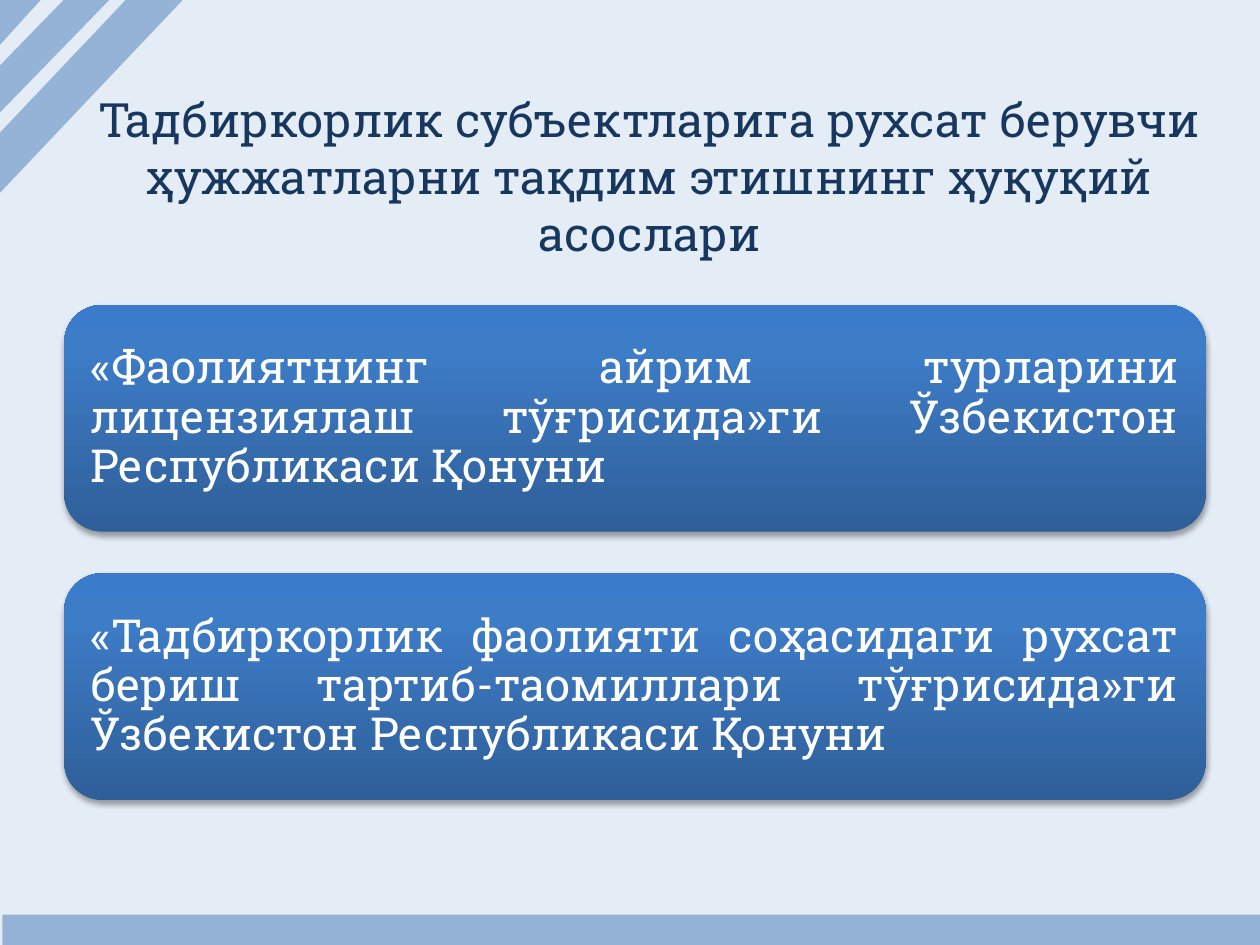
from lxml import etree
from pptx import Presentation
from pptx import util as u
from pptx.dml.color import RGBColor
from pptx.enum import shapes, text
from pptx.oxml import parse_xml
from pptx.oxml.ns import nsdecls, qn

COLUMNS, ROWS = 100, 75
COLORS = {
    "background": "E4ECF5",
    "accent": "95B3D7",
    "title": "17375E",
    "law": "FFFFFF",
    "shadow": "000000",
}
LAW_GRADIENT = [(0, "2F5F99"), (80, "3D7CC7"), (100, "3A7CCB")]


class LawSlide:
    font = "Roboto Slab"

    def __init__(self, deck):
        self.column = deck.slide_width / COLUMNS
        self.row = deck.slide_height / ROWS
        self.slide = deck.slides.add_slide(deck.slide_layouts[6])
        self.paint(self.slide.background.fill, "background")

    def paint(self, fill, color):
        fill.solid()
        fill.fore_color.rgb = RGBColor.from_string(COLORS[color])

    def place(self, left, top, width, height):
        return [round(cells * size) for cells, size in
                zip((left, top, width, height), (self.column, self.row) * 2)]

    def typeset(self, frame, words, size, color, align):
        frame.word_wrap = True
        frame.vertical_anchor = text.MSO_ANCHOR.MIDDLE
        paragraph = frame.paragraphs[0]
        paragraph.text = words
        paragraph.alignment = align
        paragraph.font.name = self.font
        paragraph.font.size = u.Pt(size)
        paragraph.font.color.rgb = RGBColor.from_string(COLORS[color])
        return paragraph

    def title(self, box, words):
        heading = self.slide.shapes.add_textbox(*self.place(*box))
        self.typeset(heading.text_frame, words, 27, "title", text.PP_ALIGN.CENTER)

    def decoration(self, kind, box, rotation=0, adjustment=None):
        ornament = self.slide.shapes.add_shape(kind, *self.place(*box))
        ornament.shadow.inherit = False
        ornament.rotation = rotation
        if adjustment is not None:
            ornament.adjustments[0] = adjustment
        self.paint(ornament.fill, "accent")
        ornament.line.fill.background()

    def law(self, box, words):
        card = self.slide.shapes.add_shape(
            shapes.MSO_SHAPE.ROUNDED_RECTANGLE, *self.place(*box))
        card.shadow.inherit = False
        card.line.fill.background()
        self.shade(card)
        frame = card.text_frame
        frame.margin_left = frame.margin_right = u.Inches(0.12)
        frame.margin_top = frame.margin_bottom = u.Inches(0.12)
        paragraph = self.typeset(frame, words, 26, "law", text.PP_ALIGN.JUSTIFY)
        paragraph.line_spacing = 0.9

    def shade(self, card):
        stops = "".join(
            f'<a:gs pos="{share * 1000}"><a:srgbClr val="{color}"/></a:gs>'
            for share, color in LAW_GRADIENT)
        properties = card.element.spPr
        properties.find(qn("a:prstGeom")).addnext(parse_xml(
            f'<a:gradFill {nsdecls("a")} rotWithShape="1"><a:gsLst>{stops}</a:gsLst>'
            '<a:lin ang="16200000" scaled="0"/></a:gradFill>'))
        shadow = etree.SubElement(
            properties.find(qn("a:effectLst")), qn("a:outerShdw"),
            blurRad=str(u.Pt(3.1)), dist=str(u.Pt(1.8)), dir="5400000", rotWithShape="0")
        shadow.append(parse_xml(
            f'<a:srgbClr {nsdecls("a")} val="{COLORS["shadow"]}"><a:alpha val="35000"/></a:srgbClr>'))


def main():
    deck = Presentation()
    deck.slide_width, deck.slide_height = u.Inches(10), u.Inches(7.5)
    page = LawSlide(deck)
    preset = shapes.MSO_SHAPE

    page.decoration(preset.RECTANGLE, (0.2, 72.6, 100, 2.4))
    laws = [
        "«Фаолиятнинг айрим турларини лицензиялаш тўғрисида»ги Ўзбекистон Республикаси Қонуни",
        "«Тадбиркорлик фаолияти соҳасидаги рухсат бериш тартиб-таомиллари тўғрисида»ги "
        "Ўзбекистон Республикаси Қонуни",
    ]
    for index, words in enumerate(laws):
        page.law((5.1, 24.2 + index * 21.3, 90.6, 18), words)
    page.title((5.1, 7.7, 92.9, 12.5),
               "Тадбиркорлик субъектларига рухсат берувчи ҳужжатларни "
               "тақдим этишнинг ҳуқуқий асослари")
    page.decoration(preset.DIAGONAL_STRIPE, (-0.2, -0.5, 8.8, 10.2), 3.4, 0.61)
    page.decoration(preset.DIAGONAL_STRIPE, (0, -0.1, 14.6, 15.4), 0, 0.69)
    page.decoration(preset.RIGHT_TRIANGLE, (-0.6, -0.1, 4.3, 3.9), 90)
    deck.save("out.pptx")


if __name__ == "__main__":
    main()
